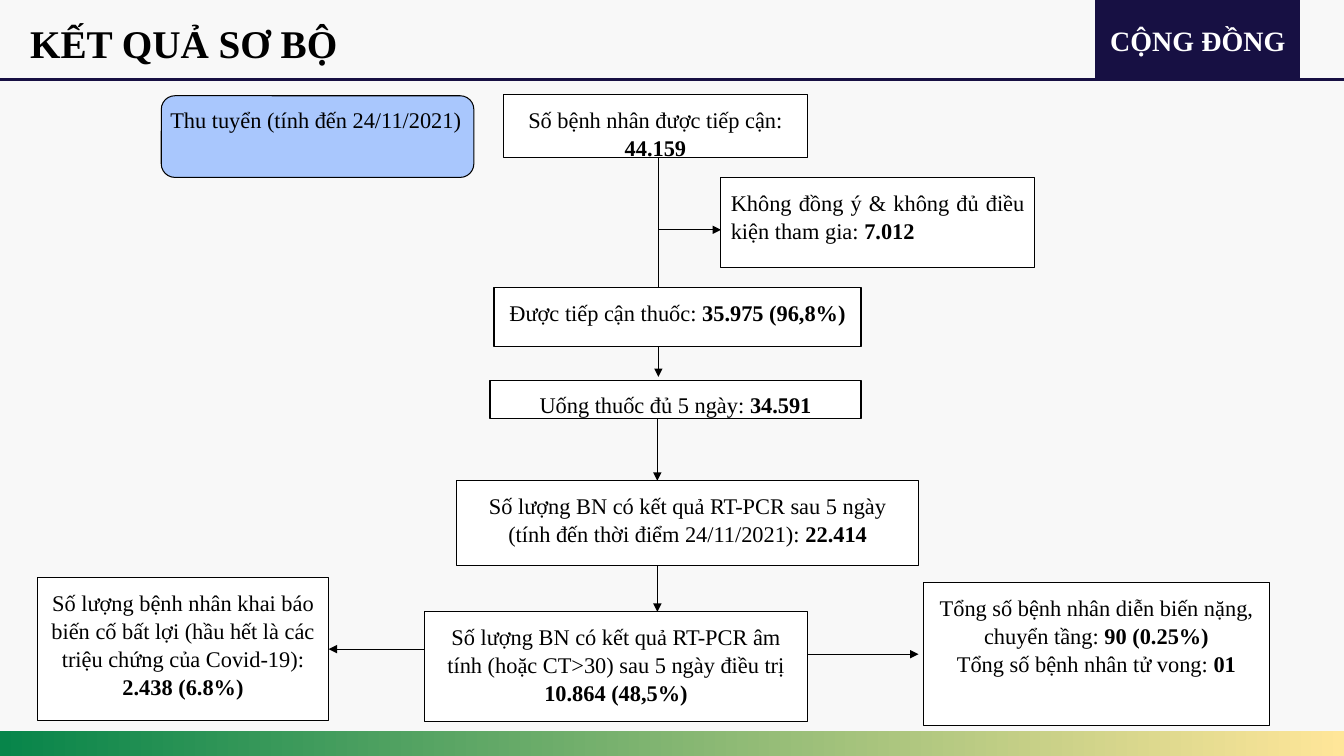
from lxml import etree
from pptx import Presentation
from pptx.dml.color import RGBColor
from pptx.enum.shapes import MSO_CONNECTOR, MSO_SHAPE
from pptx.enum.text import MSO_ANCHOR, PP_ALIGN
from pptx.oxml.ns import qn
from pptx.util import Pt

PX = 9144
FONT = "Times New Roman"
BLACK = RGBColor(0x00, 0x00, 0x00)
WHITE = RGBColor(0xFF, 0xFF, 0xFF)
NAVY = RGBColor(0x17, 0x10, 0x43)
GREY = RGBColor(0xF2, 0xF2, 0xF2)
SKY = RGBColor(0xA9, 0xC7, 0xFD)
GREEN = RGBColor(0x07, 0x85, 0x4A)
YELLOW = RGBColor(0xFF, 0xE6, 0x99)
RECT, ROUNDED = MSO_SHAPE.RECTANGLE, MSO_SHAPE.ROUNDED_RECTANGLE
STRAIGHT = MSO_CONNECTOR.STRAIGHT
LEFT, CENTER, JUSTIFY = PP_ALIGN.LEFT, PP_ALIGN.CENTER, PP_ALIGN.JUSTIFY
TOP, MIDDLE = MSO_ANCHOR.TOP, MSO_ANCHOR.MIDDLE

deck = Presentation()
deck.slide_width, deck.slide_height = 1333 * PX, 750 * PX
page = deck.slides.add_slide(deck.slide_layouts[6])


def write(box, paragraphs, align, size, color, anchor=TOP, spacing=1.0):
    frame = box.text_frame
    frame.word_wrap = True
    frame.vertical_anchor = anchor
    frame.text = "\n".join([""] * len(paragraphs))
    for para, spans in zip(frame.paragraphs, paragraphs):
        para.alignment = align
        para.line_spacing = spacing
        for text, bold in spans:
            span = para.add_run()
            span.text = text
            span.font.name = FONT
            span.font.size = Pt(size)
            span.font.bold = bold
            span.font.color.rgb = color


def connect(start, end, color, width, arrow=True):
    link = page.shapes.add_connector(STRAIGHT, *[PX * value for value in start + end])
    link.line.color.rgb = color
    link.line.width = Pt(width)
    if arrow:
        etree.SubElement(link.line._get_or_add_ln(), qn("a:tailEnd"), type="triangle")
    etree.SubElement(link._element.spPr, qn("a:effectLst"))
    return link


backdrop = page.shapes.add_shape(RECT, 0, 0, 1333 * PX, 738 * PX)
backdrop.shadow.inherit = False
backdrop.fill.solid()
backdrop.fill.fore_color.rgb = GREY
backdrop.line.fill.background()
tint = backdrop._element.spPr.find(".//" + qn("a:srgbClr"))
etree.SubElement(tint, qn("a:alpha"), val="49000")

footer = page.shapes.add_shape(RECT, 0, 725 * PX, 1333 * PX, 25 * PX)
footer.shadow.inherit = False
footer.line.fill.background()
footer.fill.gradient()
footer.fill.gradient_angle = 0
for stop, color in zip(footer.fill.gradient_stops, (GREEN, YELLOW)):
    stop.color.rgb = color

badge = page.shapes.add_shape(RECT, 1087 * PX, 0, 202 * PX, 79 * PX)
badge.shadow.inherit = False
badge.fill.solid()
badge.fill.fore_color.rgb = NAVY
badge.line.color.rgb = NAVY
badge.line.width = Pt(1)
write(badge, [[("CỘNG ĐỒNG", True)]], CENTER, 20, WHITE, MIDDLE)

connect((0, 79), (1333, 79), NAVY, 2, arrow=False)
title = page.shapes.add_textbox(20 * PX, 14 * PX, 731 * PX, 57 * PX)
write(title, [[("KẾT QUẢ SƠ BỘ", True)]], LEFT, 28, BLACK)

connect((653, 156), (653, 374), BLACK, 0.75)

steps = {
    "approached": ((499, 94, 302, 62), CENTER, [
        [("Số bệnh nhân được tiếp cận: ", False), ("44.159", True)]]),
    "excluded": ((715, 176, 311, 89), JUSTIFY, [
        [("Không đồng ý & không đủ điều kiện tham gia: ", False), ("7.012", True)]]),
    "received": ((490, 285, 364, 59), CENTER, [
        [("Được tiếp cận thuốc: ", False), ("35.975 (96,8%)", True)]]),
    "completed": ((486, 377, 368, 38), CENTER, [
        [("Uống thuốc đủ 5 ngày: ", False), ("34.591", True)]]),
    "tested": ((453, 477, 458, 84), CENTER, [
        [("Số lượng BN có kết quả RT-PCR sau 5 ngày (tính đến thời điểm 24/11/2021): ", False),
         ("22.414", True)]]),
    "recruitment": ((160, 95, 310, 81), JUSTIFY, [
        [("Thu tuyển (tính đến 24/11/2021)", False)]]),
    "negative": ((421, 607, 380, 109), CENTER, [
        [("Số lượng BN có kết quả RT-PCR âm tính (hoặc CT>30) sau 5 ngày điều trị", False)],
        [("10.864 (48,5%)", True)]]),
    "adverse": ((37, 573, 289, 142), CENTER, [
        [("Số lượng bệnh nhân khai báo biến cố bất lợi "
          "(hầu hết là các triệu chứng của Covid-19):", False)],
        [("2.438 (6.8%)", True)]]),
    "severe": ((916, 578, 343, 142), CENTER, [
        [("Tổng số bệnh nhân diễn biến nặng, chuyển tầng: ", False), ("90 (0.25%)", True)],
        [("Tổng số bệnh nhân tử vong: ", False), ("01", True)]]),
}
boxes = {}
for name, (bounds, align, paragraphs) in steps.items():
    is_label = name == "recruitment"
    box = page.shapes.add_shape(ROUNDED if is_label else RECT, *[PX * value for value in bounds])
    box.shadow.inherit = False
    box.fill.solid()
    box.fill.fore_color.rgb = SKY if is_label else WHITE
    box.line.color.rgb = BLACK
    box.line.width = Pt(0.75)
    frame = box.text_frame
    inset = (5 if is_label else 10) * PX
    frame.margin_left = frame.margin_right = inset
    frame.margin_top = frame.margin_bottom = inset
    write(box, paragraphs, align, 16, BLACK, spacing=1.05)
    boxes[name] = box

for start, end, width in (
    ((653, 228), (715, 228), 0.75),
    ((801, 649), (911, 649), 0.75),
    ((652, 415), (652, 477), 0.5),
    ((652, 561), (652, 607), 0.5),
):
    connect(start, end, BLACK, width)
adverse_link = connect((421, 644), (326, 644), BLACK, 0.75)
adverse_link.end_connect(boxes["adverse"], 3)

deck.save("out.pptx")
